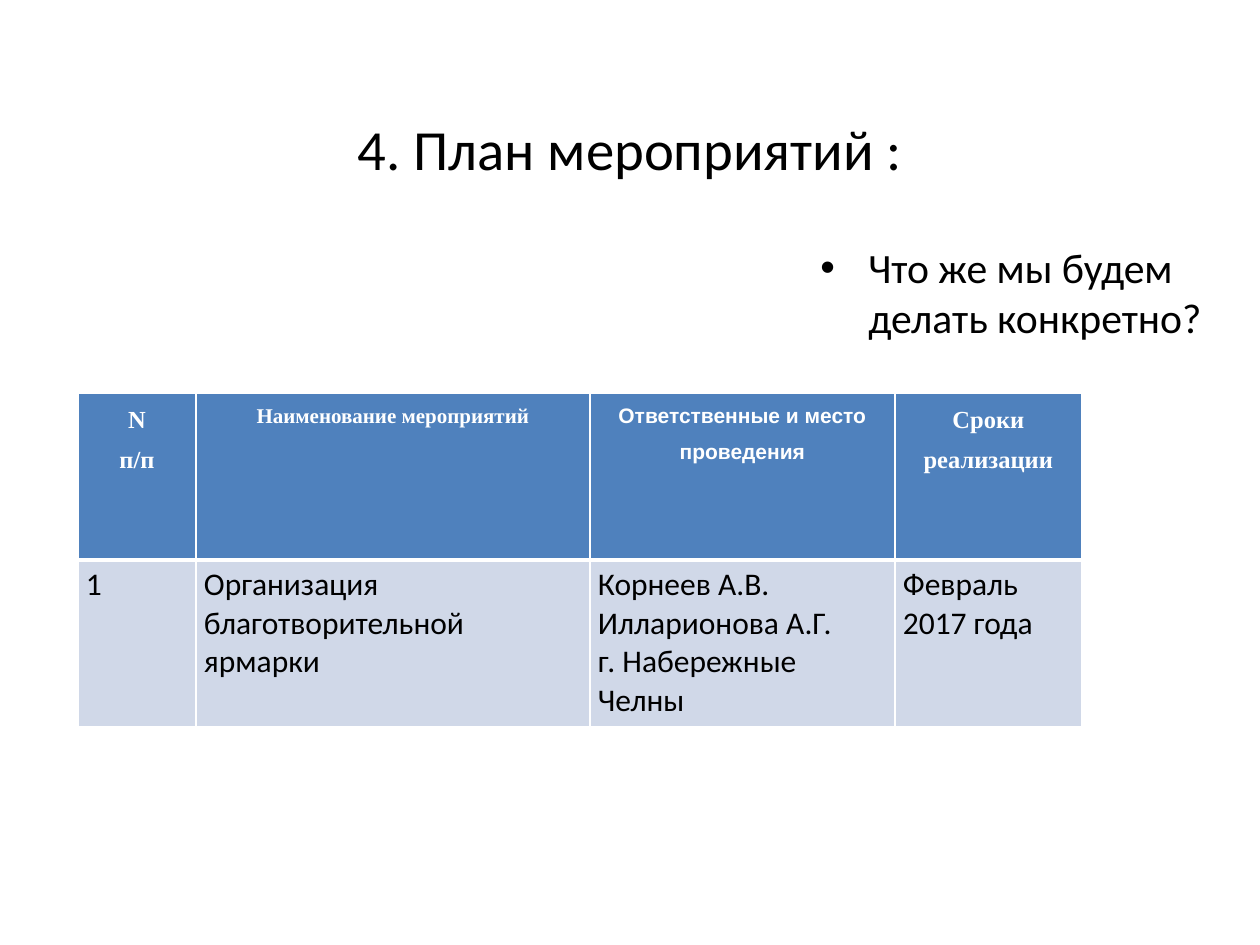
from lxml.etree import SubElement
from pptx import Presentation
from pptx.dml.color import RGBColor
from pptx.enum.text import MSO_ANCHOR, MSO_AUTO_SIZE, PP_ALIGN
from pptx.oxml.ns import qn
from pptx.util import Emu, Pt

PX_PER_INCH = 126
BLACK = RGBColor(0x00, 0x00, 0x00)
WHITE = RGBColor(0xFF, 0xFF, 0xFF)
HEADER_BLUE = RGBColor(0x4F, 0x81, 0xBD)
ROW_BLUE = RGBColor(0xD0, 0xD8, 0xE8)

COLUMN_WIDTHS = [118, 394, 305, 187]
ROW_HEIGHT = 167
HEADERS = [
    ("N\nп/п", "Times New Roman", 14),
    ("Наименование мероприятий", "Times New Roman", 12),
    ("Ответственные и место проведения", "Arial", 12),
    ("Сроки реализации", "Times New Roman", 14),
]
EVENT = [
    "1",
    "Организация благотворительной ярмарки",
    "Корнеев А.В.\nИлларионова А.Г.\nг. Набережные Челны",
    "Февраль 2017 года",
]


def px(length):
    """Turn pixels into EMU."""
    return Emu(round(length * 914400 / PX_PER_INCH))


def write_text(frame, text, font="Calibri", size=18, color=BLACK, bold=False,
               align=PP_ALIGN.LEFT, spacing=None):
    """Fill a text frame with one formatted paragraph per line."""
    frame.word_wrap = True
    for index, line in enumerate(text.split("\n")):
        para = frame.paragraphs[0] if index == 0 else frame.add_paragraph()
        para.alignment = align
        para.line_spacing = spacing
        span = para.add_run()
        span.text = line
        span.font.name = font
        span.font.size = Pt(size)
        span.font.bold = bold
        span.font.color.rgb = color


def add_title(page, text):
    """Place and format the title placeholder."""
    title = page.shapes.title
    title.left, title.top, title.width, title.height = map(px, (63, 38, 1134, 157))
    frame = title.text_frame
    frame.auto_size = MSO_AUTO_SIZE.NONE
    frame.vertical_anchor = MSO_ANCHOR.BOTTOM
    frame.margin_bottom = px(13)
    write_text(frame, text, size=32.4, align=PP_ALIGN.CENTER)


def add_bullet_box(page, text):
    """Add a text box with one bulleted paragraph."""
    box = page.shapes.add_textbox(*map(px, (808, 236, 428, 128)))
    write_text(box.text_frame, text, size=23.8)
    properties = box.text_frame.paragraphs[0]._p.get_or_add_pPr()
    properties.set("marL", str(px(48)))
    properties.set("indent", str(px(-48)))
    SubElement(properties, qn("a:buFont"), typeface="Arial")
    SubElement(properties, qn("a:buChar"), char="•")


def format_cell(cell, fill, margins, bottom_width=1):
    """Set the fill, margins and white borders of a cell."""
    side, top = margins
    cell.margin_left = cell.margin_right = px(side)
    cell.margin_top = cell.margin_bottom = px(top)
    properties = cell._tc.get_or_add_tcPr()
    for edge, width in (("L", 1), ("R", 1), ("T", 1), ("B", bottom_width)):
        line = SubElement(properties, qn(f"a:ln{edge}"), w=str(Pt(width)))
        paint = SubElement(line, qn("a:solidFill"))
        SubElement(paint, qn("a:srgbClr"), val=str(WHITE))
    cell.fill.solid()
    cell.fill.fore_color.rgb = fill


def add_plan_table(page):
    """Add the table of planned events."""
    table = page.shapes.add_table(
        2, len(COLUMN_WIDTHS), px(78), px(393),
        px(sum(COLUMN_WIDTHS)), px(2 * ROW_HEIGHT)).table
    for column, width in zip(table.columns, COLUMN_WIDTHS):
        column.width = px(width)
    for cell, (text, font, size) in zip(table.rows[0].cells, HEADERS):
        format_cell(cell, HEADER_BLUE, (6, 0), bottom_width=3)
        write_text(cell.text_frame, text, font=font, size=size, color=WHITE,
                   bold=True, align=PP_ALIGN.CENTER, spacing=1.5)
    for cell, text in zip(table.rows[1].cells, EVENT):
        format_cell(cell, ROW_BLUE, (8, 6))
        write_text(cell.text_frame, text)


def main():
    """Build and save the slide."""
    deck = Presentation()
    deck.slide_width, deck.slide_height = px(1260), px(945)
    page = deck.slides.add_slide(deck.slide_layouts[5])
    add_title(page, "4. План мероприятий :")
    add_plan_table(page)
    add_bullet_box(page, "Что же мы будем делать конкретно?")
    deck.save("out.pptx")


if __name__ == "__main__":
    main()
